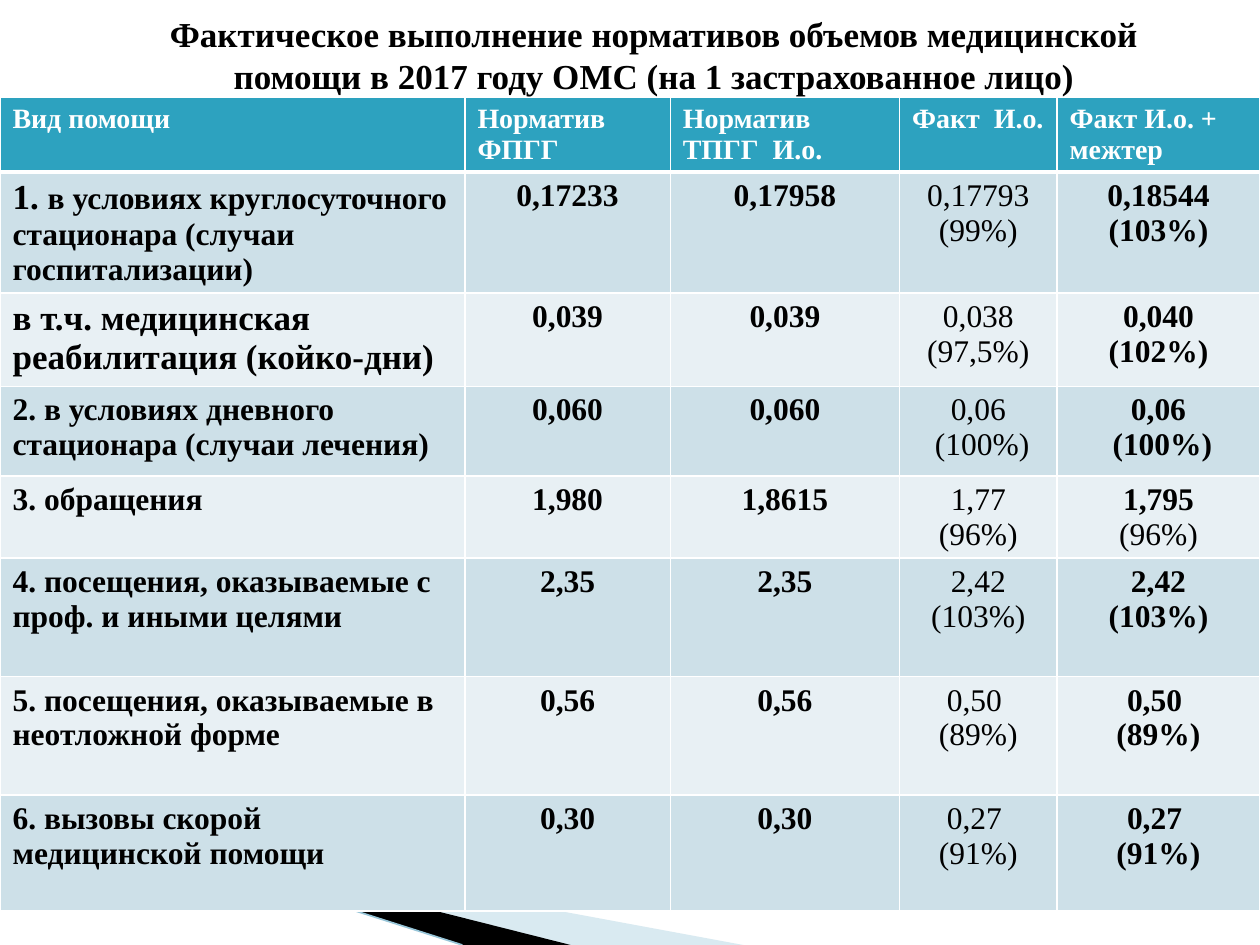
from lxml import etree
from pptx import Presentation
from pptx.dml.color import RGBColor
from pptx.enum.shapes import MSO_CONNECTOR
from pptx.enum.text import MSO_ANCHOR, PP_ALIGN
from pptx.oxml.ns import qn
from pptx.util import Pt

PX = 9144
FONT = "Times New Roman"
LEFT, CENTER = PP_ALIGN.LEFT, PP_ALIGN.CENTER
TOP = MSO_ANCHOR.TOP
STRAIGHT = MSO_CONNECTOR.STRAIGHT
TITLE_ONLY = 5

COLORS = {
    "header": "2DA2BF",
    "odd": "CDE0E8",
    "even": "E8F0F4",
    "white": "FFFFFF",
    "black": "000000",
    "pale": "A0CBDC",
    "edge": "97C5D8",
}

COLUMN_WIDTHS = [369, 163, 182, 125, 161]
ROW_HEIGHTS = [59, 96, 74, 71, 65, 94, 94, 92]


def bold(*lines, size=18):
    return [[(line, size, True)] for line in lines]


def plain(*lines):
    return [[(line, 18, False)] for line in lines]


HEADINGS = ["Вид помощи", "Норматив ФПГГ", "Норматив ТПГГ  И.о.", "Факт  И.о.", "Факт И.о. + межтер"]
HOSPITAL = [[("1. ", 20, True),
             ("в условиях круглосуточного стационара (случаи госпитализации)", 18, True)]]

ROWS = [
    [bold(heading, size=16) for heading in HEADINGS],
    [HOSPITAL, bold("0,17233"), bold("0,17958"),
     plain("0,17793 (99%)"), bold("0,18544", "(103%)")],
    [bold("в т.ч. медицинская реабилитация (койко-дни)", size=20), bold("0,039"), bold("0,039"),
     plain("0,038 (97,5%)"), bold("0,040", "(102%)")],
    [bold("2. в условиях дневного стационара (случаи лечения)"), bold("0,060"), bold("0,060"),
     plain("0,06", " (100%)"), bold("0,06", " (100%)")],
    [bold("3. обращения"), bold("1,980"), bold("1,8615"),
     plain("1,77\n(96%)"), bold("1,795") + plain("(96%)")],
    [bold("4. посещения, оказываемые с проф. и иными целями"), bold("2,35"), bold("2,35"),
     plain("2,42", "(103%)"), bold("2,42", "(103%)")],
    [bold("5. посещения, оказываемые в неотложной форме"), bold("0,56"), bold("0,56"),
     plain("0,50 ", "(89%)"), bold("0,50 ", "(89%)")],
    [bold("6. вызовы скорой медицинской помощи"), bold("0,30"), bold("0,30"),
     plain("0,27 ", "(91%)"), bold("0,27 ", "(91%)")],
]


def rgb(name):
    return RGBColor.from_string(COLORS[name])


def emu(*lengths):
    return [length * PX for length in lengths]


def add_run(paragraph, text, size, is_bold, color):
    for index, piece in enumerate(text.split("\n")):
        if index:
            paragraph.add_line_break()
        run = paragraph.add_run()
        run.text = piece
        run.font.name = FONT
        run.font.size = Pt(size)
        run.font.bold = is_bold
        run.font.color.rgb = rgb(color)


def set_borders(cell, widths):
    properties = cell._tc.get_or_add_tcPr()
    for index, (side, width) in enumerate(widths.items()):
        border = etree.Element(qn(f"a:ln{side}"), w=str(Pt(width)))
        fill = etree.SubElement(border, qn("a:solidFill"))
        etree.SubElement(fill, qn("a:srgbClr"), val=COLORS["white"])
        properties.insert(index, border)


def draw_wedge(slide, box, corners, color, opacity=None):
    left, top = box
    points = [((left + x) * PX, (top + y) * PX) for x, y in corners]
    builder = slide.shapes.build_freeform(*points[0])
    builder.add_line_segments(points[1:])
    wedge = builder.convert_to_shape()
    wedge.shadow.inherit = False
    wedge.fill.solid()
    wedge.fill.fore_color.rgb = rgb(color)
    wedge.line.fill.background()
    if opacity:
        tint = wedge._element.spPr.find(f".//{qn('a:srgbClr')}")
        etree.SubElement(tint, qn("a:alpha"), val=str(opacity * 1000))


def draw_corner(slide, box):
    left, top, width, height = box
    draw_wedge(slide, (left, top), [(55, 18), (590, height), (452, height)], "pale", 40)
    draw_wedge(slide, (left, top), [(53, 16), (453, height), (367, height)], "black")
    edge = slide.shapes.add_connector(STRAIGHT, *emu(left, top, left + width, top + height))
    edge.line.color.rgb = rgb("edge")
    edge.line.width = Pt(0.95)
    etree.SubElement(edge._element.spPr, qn("a:effectLst"))


def fill_cell(cell, paragraphs, row, column):
    cell.fill.solid()
    cell.fill.fore_color.rgb = rgb("header" if row == 0 else "odd" if row % 2 else "even")
    set_borders(cell, {"L": 1, "R": 1, "T": 3 if row == 1 else 1, "B": 3 if row == 0 else 1})
    frame = cell.text_frame
    for index, runs in enumerate(paragraphs):
        paragraph = frame.add_paragraph() if index else frame.paragraphs[0]
        paragraph.alignment = CENTER if row and column else LEFT
        for text, size, is_bold in runs:
            add_run(paragraph, text, size, is_bold, "black" if row else "white")


def draw_norms(slide, box):
    norms = slide.shapes.add_table(len(ROWS), len(HEADINGS), *emu(*box)).table
    for column, width in zip(norms.columns, COLUMN_WIDTHS):
        column.width = width * PX
    for row, height in zip(norms.rows, ROW_HEIGHTS):
        row.height = height * PX
    for row, cells in enumerate(ROWS):
        for column, paragraphs in enumerate(cells):
            fill_cell(norms.cell(row, column), paragraphs, row, column)


def draw_title(slide, box):
    title = slide.shapes.title
    slide.shapes._spTree.append(title._element)
    title.left, title.top, title.width, title.height = emu(*box)
    frame = title.text_frame
    frame.word_wrap = True
    frame.vertical_anchor = TOP
    heading = frame.paragraphs[0]
    heading.alignment = CENTER
    heading.line_spacing = 1.0
    add_run(heading, "Фактическое выполнение нормативов объемов медицинской помощи "
            "в 2017 году ОМС (на 1 застрахованное лицо)", 20, True, "black")


def main():
    deck = Presentation()
    deck.slide_width, deck.slide_height = emu(1000, 750)
    slide = deck.slides.add_slide(deck.slide_layouts[TITLE_ONLY])
    draw_corner(slide, (0, 633, 367, 117))
    draw_norms(slide, (0, 77, sum(COLUMN_WIDTHS), sum(ROW_HEIGHTS)))
    draw_title(slide, (74, 5, 890, 77))
    deck.save("out.pptx")


if __name__ == "__main__":
    main()
